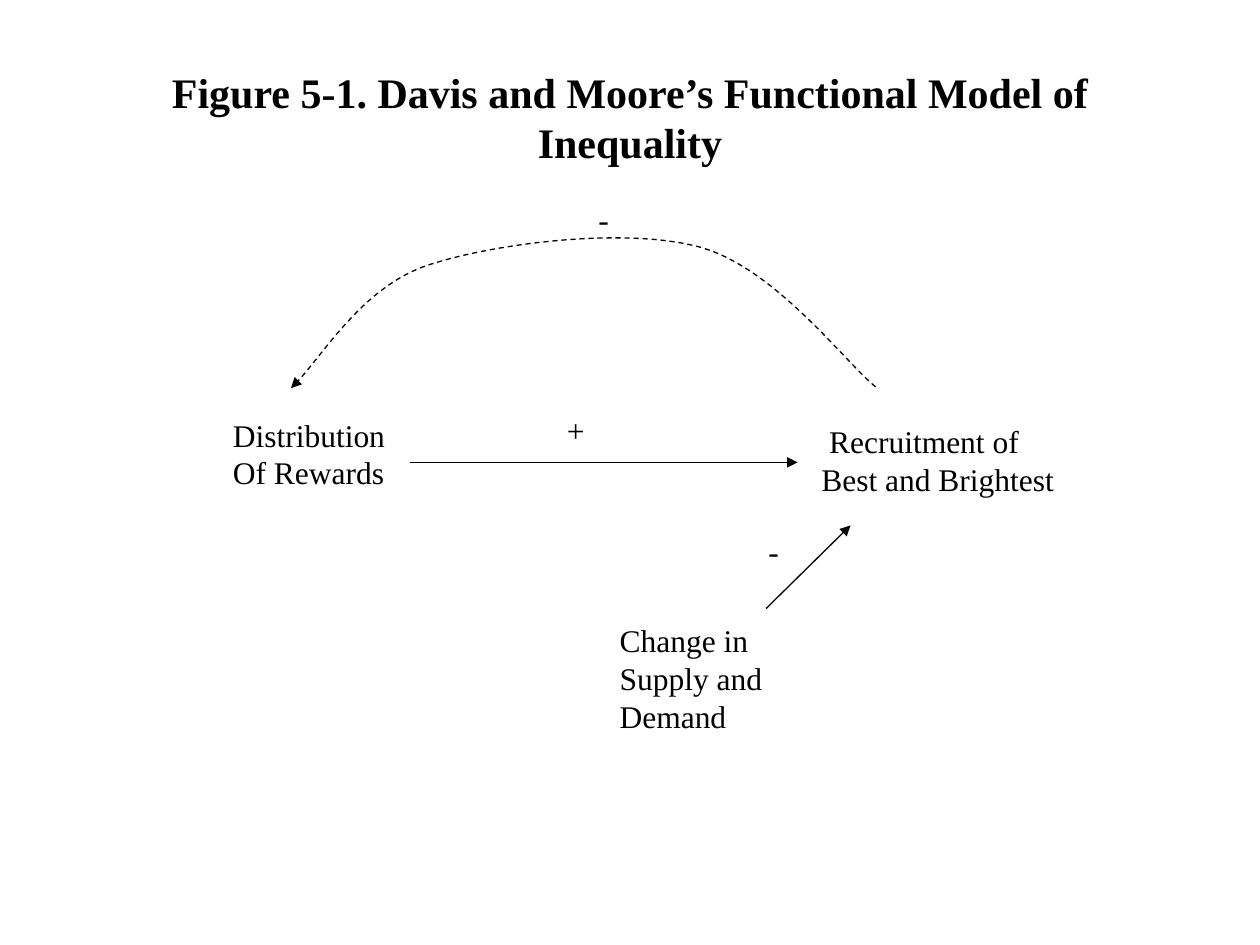
from lxml.etree import SubElement
from pptx import Presentation
from pptx.dml.color import RGBColor
from pptx.enum.dml import MSO_LINE
from pptx.enum.shapes import MSO_CONNECTOR
from pptx.enum.text import MSO_ANCHOR, MSO_AUTO_SIZE, PP_ALIGN
from pptx.oxml.ns import qn
from pptx.util import Inches, Pt

FONT = "Times New Roman"
BLACK = "000000"
CURVE_STEPS = 40

LABELS = [
    ("Distribution\nOf Rewards", 1.75, 3.25, 1.41, 0.7),
    (" Recruitment of\nBest and Brightest", 6.42, 3.3, 2.05, 0.7),
    ("Change in\nSupply and\nDemand", 4.82, 4.88, 1.33, 1),
    ("-", 4.65, 1.54, 0.28, 0.4),
    ("+", 4.4, 3.21, 0.34, 0.4),
    ("-", 6, 4.17, 0.33, 0.4),
]
ARROWS = [
    ((3.25, 3.67), (6.33, 3.67)),
    ((6.08, 4.83), (6.75, 4.17)),
]
FEEDBACK_START = (6.95, 3.07)
FEEDBACK_CURVES = [
    ((6.72, 2.89), (6.15, 2.12), (5.55, 1.96)),
    ((4.96, 1.8), (3.91, 1.93), (3.38, 2.11)),
    ((2.84, 2.3), (2.53, 2.88), (2.31, 3.08)),
]


def color(value):
    return RGBColor.from_string(value)


def format_text(frame, size, bold=False):
    for paragraph in frame.paragraphs:
        for run in paragraph.runs:
            run.font.name = FONT
            run.font.size = Pt(size)
            run.font.bold = bold
            run.font.color.rgb = color(BLACK)


def set_title(slide, text):
    title = slide.shapes.title
    title.left, title.top = Inches(0.5), Inches(0.3)
    title.width, title.height = Inches(9), Inches(1.25)
    frame = title.text_frame
    frame.text = text
    frame.vertical_anchor = MSO_ANCHOR.MIDDLE
    frame.paragraphs[0].alignment = PP_ALIGN.CENTER
    format_text(frame, 24, bold=True)


def add_label(slide, text, *bounds):
    label = slide.shapes.add_textbox(*map(Inches, bounds))
    frame = label.text_frame
    frame.text = text
    frame.word_wrap = False
    frame.auto_size = MSO_AUTO_SIZE.SHAPE_TO_FIT_TEXT
    format_text(frame, 18)


def style_arrow(arrow):
    arrow.line.color.rgb = color(BLACK)
    arrow.line.width = Pt(0.75)
    line = arrow.line._get_or_add_ln()
    SubElement(line, qn("a:tailEnd"), type="triangle")


def add_arrow(slide, start, end):
    arrow = slide.shapes.add_connector(
        MSO_CONNECTOR.STRAIGHT, *map(Inches, start + end)
    )
    style_arrow(arrow)
    SubElement(arrow._element.spPr, qn("a:effectLst"))


def bezier_point(t, *controls):
    weights = ((1 - t) ** 3, 3 * t * (1 - t) ** 2, 3 * t**2 * (1 - t), t**3)
    return tuple(
        Inches(sum(w * value for w, value in zip(weights, axis)))
        for axis in zip(*controls)
    )


def add_feedback_arrow(slide, start, curves):
    builder = slide.shapes.build_freeform(*map(Inches, start))
    for curve in curves:
        points = [
            bezier_point(step / CURVE_STEPS, start, *curve)
            for step in range(1, CURVE_STEPS + 1)
        ]
        builder.add_line_segments(points, close=False)
        start = curve[-1]
    feedback = builder.convert_to_shape()
    feedback.shadow.inherit = False
    feedback.fill.background()
    feedback.line.dash_style = MSO_LINE.DASH
    style_arrow(feedback)


def main():
    presentation = Presentation()
    presentation.slide_width = Inches(10)
    presentation.slide_height = Inches(7.5)
    slide = presentation.slides.add_slide(presentation.slide_layouts[5])
    set_title(slide, "Figure 5-1. Davis and Moore’s Functional Model of Inequality")
    for start, end in ARROWS:
        add_arrow(slide, start, end)
    add_feedback_arrow(slide, FEEDBACK_START, FEEDBACK_CURVES)
    for label in LABELS:
        add_label(slide, *label)
    presentation.save("out.pptx")


if __name__ == "__main__":
    main()
